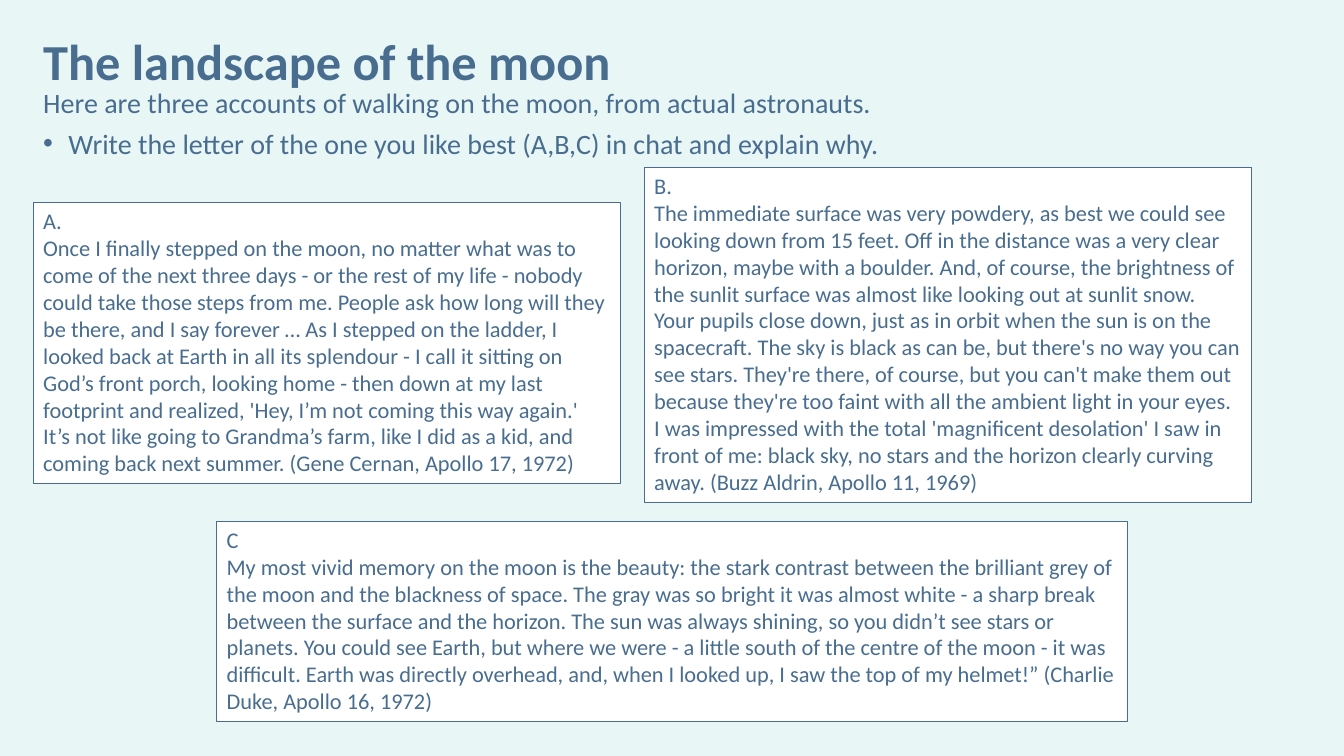
"""Build the slide on astronauts' accounts of the landscape of the moon."""
from dataclasses import dataclass

from lxml.etree import SubElement
from pptx import Presentation
from pptx.dml.color import RGBColor
from pptx.enum.shapes import MSO_SHAPE
from pptx.enum.text import MSO_ANCHOR, MSO_AUTO_SIZE, PP_ALIGN
from pptx.oxml.ns import qn
from pptx.slide import Slide
from pptx.text.text import TextFrame, _Paragraph
from pptx.util import Inches, Pt


@dataclass(frozen=True)
class Theme:
    """Colours, font and type sizes of the slide."""

    background: RGBColor = RGBColor(0xE9, 0xF6, 0xF6)
    ink: RGBColor = RGBColor(0x48, 0x6D, 0x8F)
    card: RGBColor = RGBColor(0xFF, 0xFF, 0xFF)
    font: str = "Calibri"
    title_size: int = 36
    body_size: int = 20
    account_size: int = 16
    outline: float = 0.75


@dataclass(frozen=True)
class Box:
    """A rectangle measured in inches."""

    left: float
    top: float
    width: float
    height: float

    def lengths(self) -> tuple[Inches, Inches, Inches, Inches]:
        """Return the position and size as lengths."""
        return Inches(self.left), Inches(self.top), Inches(self.width), Inches(self.height)


@dataclass(frozen=True)
class Account:
    """One astronaut's account and the place of its card."""

    label: str
    text: str
    box: Box


THEME = Theme()
LEFT_MARGIN = 0.33
TITLE = "The landscape of the moon"
TITLE_BOX = Box(LEFT_MARGIN, 0.23, 12.09, 0.81)
INTRODUCTION = "Here are three accounts of walking on the moon, from actual astronauts."
TASK = "Write the letter of the one you like best (A,B,C) in chat and explain why."
INTRODUCTION_BOX = Box(LEFT_MARGIN, 0.86, 12.09, 0.78)

ACCOUNTS = (
    Account(
        "C",
        "My most vivid memory on the moon is the beauty: the stark contrast between the "
        "brilliant grey of the moon and the blackness of space. The gray was so bright it was "
        "almost white - a sharp break between the surface and the horizon. The sun was always "
        "shining, so you didn’t see stars or planets. You could see Earth, but where we were - "
        "a little south of the centre of the moon - it was difficult. Earth was directly "
        "overhead, and, when I looked up, I saw the top of my helmet!” "
        "(Charlie Duke, Apollo 16, 1972)",
        Box(2.15, 5.17, 9.03, 1.99),
    ),
    Account(
        "B.",
        "The immediate surface was very powdery, as best we could see looking down from 15 "
        "feet. Off in the distance was a very clear horizon, maybe with a boulder. And, of "
        "course, the brightness of the sunlit surface was almost like looking out at sunlit "
        "snow. Your pupils close down, just as in orbit when the sun is on the spacecraft. The "
        "sky is black as can be, but there's no way you can see stars. They're there, of "
        "course, but you can't make them out because they're too faint with all the ambient "
        "light in your eyes. I was impressed with the total 'magnificent desolation' I saw in "
        "front of me: black sky, no stars and the horizon clearly curving away. "
        "(Buzz Aldrin, Apollo 11, 1969)",
        Box(6.39, 1.66, 6.02, 3.33),
    ),
    Account(
        "A.",
        "Once I finally stepped on the moon, no matter what was to come of the next three days "
        "- or the rest of my life - nobody could take those steps from me. People ask how long "
        "will they be there, and I say forever … As I stepped on the ladder, I looked back at "
        "Earth in all its splendour - I call it sitting on God’s front porch, looking home - "
        "then down at my last footprint and realized, 'Hey, I’m not coming this way again.' "
        "It’s not like going to Grandma’s farm, like I did as a kid, and coming back next "
        "summer. (Gene Cernan, Apollo 17, 1972)",
        Box(LEFT_MARGIN, 2.01, 5.82, 2.79),
    ),
)


def apply_format(target: object, values: dict[str, object]) -> None:
    """Set every attribute named in the format values."""
    for name, value in values.items():
        setattr(target, name, value)


def write_paragraphs(
    frame: TextFrame, texts: tuple[str, ...], size: int, line_spacing: float = 1.0,
    bold: bool = False,
) -> None:
    """Fill a text frame with uniformly styled paragraphs."""
    frame.word_wrap = True
    frame.text = "\n".join(texts)
    for paragraph in frame.paragraphs:
        apply_format(paragraph, {"alignment": PP_ALIGN.LEFT, "line_spacing": line_spacing})
        for run in paragraph.runs:
            apply_format(run.font, {"name": THEME.font, "size": Pt(size), "bold": bold})
            run.font.color.rgb = THEME.ink


def add_bullet(paragraph: _Paragraph) -> None:
    """Give a paragraph a hanging round bullet."""
    properties = paragraph._p.get_or_add_pPr()
    properties.set("marL", str(Inches(0.25)))
    properties.set("indent", str(Inches(-0.25)))
    SubElement(properties, qn("a:buFont"), typeface="Arial")
    SubElement(properties, qn("a:buChar"), char="•")


def add_heading(slide: Slide) -> None:
    """Add the title, the introduction and the task."""
    title = slide.shapes.add_textbox(*TITLE_BOX.lengths()).text_frame
    title.vertical_anchor = MSO_ANCHOR.MIDDLE
    write_paragraphs(title, (TITLE,), THEME.title_size, 0.9, bold=True)

    body = slide.shapes.add_textbox(*INTRODUCTION_BOX.lengths()).text_frame
    write_paragraphs(body, (INTRODUCTION, TASK), THEME.body_size, 0.8)
    task = body.paragraphs[1]
    task.space_before = Pt(10)
    add_bullet(task)


def add_account(slide: Slide, account: Account) -> None:
    """Add one outlined card holding an account."""
    shape = slide.shapes.add_shape(MSO_SHAPE.RECTANGLE, *account.box.lengths())
    shape.shadow.inherit = False
    shape.fill.solid()
    shape.fill.fore_color.rgb = THEME.card
    shape.line.color.rgb = THEME.ink
    shape.line.width = Pt(THEME.outline)
    frame = shape.text_frame
    write_paragraphs(frame, (account.label, account.text), THEME.account_size)
    apply_format(
        frame,
        {"vertical_anchor": MSO_ANCHOR.TOP, "auto_size": MSO_AUTO_SIZE.SHAPE_TO_FIT_TEXT},
    )


def main() -> None:
    """Build and save the presentation."""
    presentation = Presentation()
    apply_format(
        presentation, {"slide_width": Inches(13.33), "slide_height": Inches(7.5)}
    )
    slide = presentation.slides.add_slide(presentation.slide_layouts[6])
    slide.background.fill.solid()
    slide.background.fill.fore_color.rgb = THEME.background
    add_heading(slide)
    for account in ACCOUNTS:
        add_account(slide, account)
    presentation.save("out.pptx")


if __name__ == "__main__":
    main()
